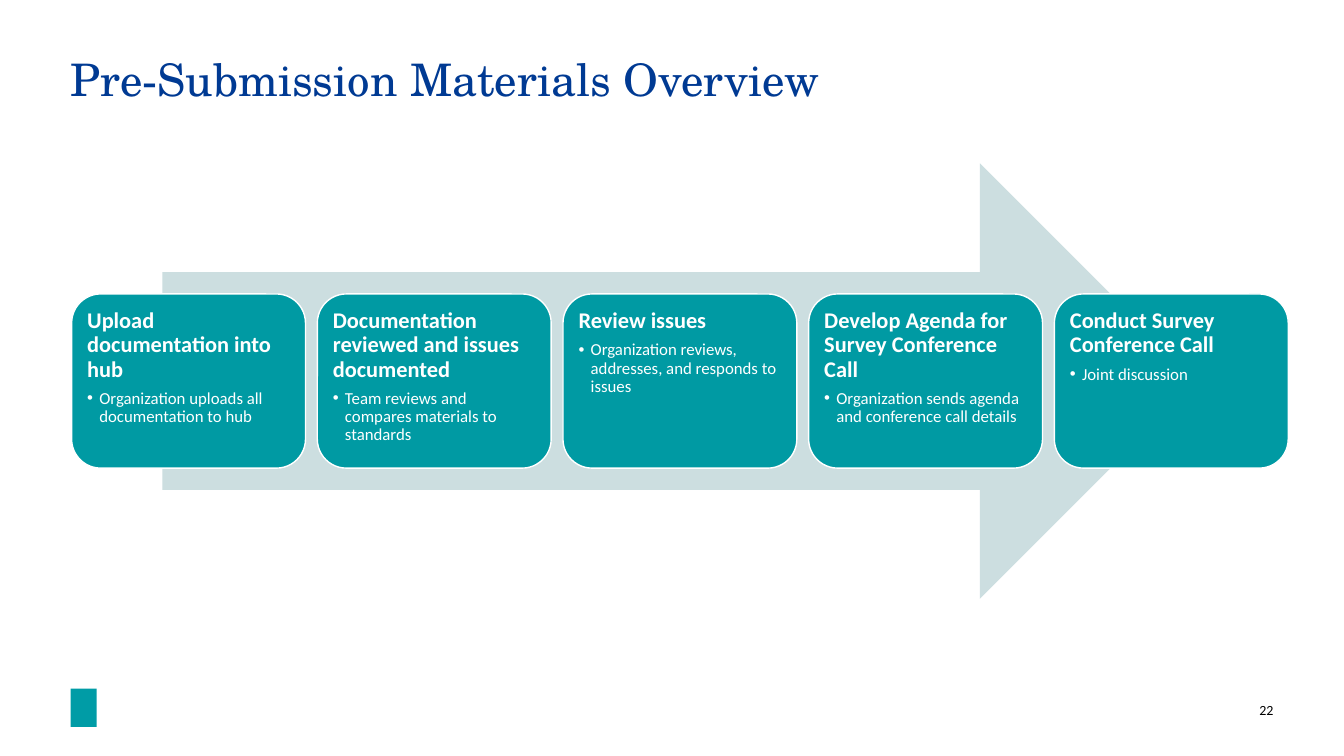
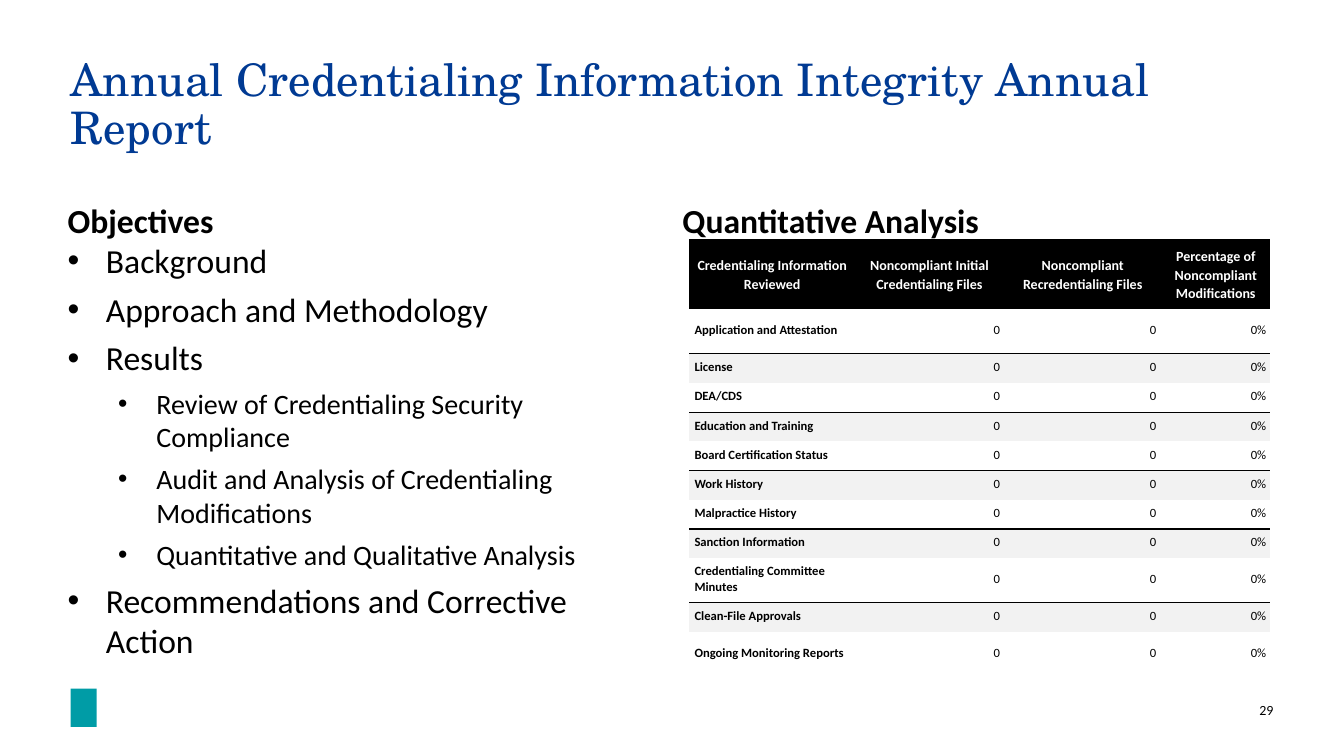
from lxml.etree import SubElement
from pptx import Presentation
from pptx.dml.color import RGBColor
from pptx.enum.shapes import MSO_SHAPE as Preset
from pptx.enum.text import MSO_ANCHOR as Anchor, PP_ALIGN as Align
from pptx.oxml import parse_xml
from pptx.oxml.ns import nsdecls, qn
from pptx.util import Inches, Pt

SLIDE_WIDTH, SLIDE_HEIGHT = Inches(13.33), Inches(7.5)
BODY_FONT, TITLE_FONT = "Calibri", "TeX Gyre Schola"
BLACK, WHITE, NAVY, TEAL = "000000", "FFFFFF", "003A93", "009AA3"
EMBLEM_TEAL, PALE_TEAL, BAND_GREY = "009CA6", "CCDEE0", "F2F2F2"
PLAIN_TABLE_STYLE = "{2D5ABB26-0587-4C30-8999-92F81FD0307C}"

ARROW = (12.08, 21.6, 77.04, 57.6)
CARD_LEFT, CARD_WIDTH, CARD_GAP = 5.33, 17.4, 0.88
COLUMN_LEFTS, COLUMN_WIDTH = (5.03, 50.78), 44.18
HEADING_TOP, HEADING_HEIGHT, CONTENT_HEIGHT = 22.4, 9.33, 57.6
CONTENT_TOP = HEADING_TOP + HEADING_HEIGHT

STEPS = [
    ("Upload documentation into hub", "Organization uploads all documentation to hub"),
    ("Documentation reviewed and issues documented", "Team reviews and compares materials to standards"),
    ("Review issues", "Organization reviews, addresses, and responds to issues"),
    ("Develop Agenda for Survey Conference Call", "Organization sends agenda and conference call details"),
    ("Conduct Survey Conference Call", "Joint discussion"),
]
OBJECTIVES = [
    (0, "Background"),
    (0, "Approach and Methodology"),
    (0, "Results"),
    (1, "Review of Credentialing Security Compliance"),
    (1, "Audit and Analysis of Credentialing Modifications"),
    (1, "Quantitative and Qualitative Analysis"),
    (0, "Recommendations and Corrective Action"),
]
TABLE_HEADER = [
    "Credentialing Information Reviewed", "Noncompliant Initial Credentialing Files",
    "Noncompliant Recredentialing Files", "Percentage of Noncompliant Modifications",
]
REVIEWED_ITEMS = [
    "Application and Attestation", "License", "DEA/CDS", "Education and Training",
    "Board Certification Status", "Work History", "Malpractice History",
    "Sanction Information", "Credentialing Committee Minutes",
    "Clean-File Approvals", "Ongoing Monitoring Reports",
]
COLUMN_INCHES = [1.63, 1.49, 1.55, 1.09]
HEADER_ROW, LINE_ROW, TALL_ROW = 0.69, 0.29, 0.44
TALL_ITEMS = {"Application and Attestation", "Credentialing Committee Minutes", "Ongoing Monitoring Reports"}


def color(hex_string):
    return RGBColor.from_string(hex_string)


def percent_box(left, top, width, height):
    return (int(SLIDE_WIDTH * left / 100), int(SLIDE_HEIGHT * top / 100),
            int(SLIDE_WIDTH * width / 100), int(SLIDE_HEIGHT * height / 100))


def set_bullet(paragraph, indent, hanging, bullet_size):
    properties = paragraph._p.get_or_add_pPr()
    properties.set("marL", str(Inches(indent)))
    properties.set("indent", str(-Inches(hanging)))
    SubElement(properties, qn("a:buSzPct")).set("val", str(bullet_size * 1000))
    SubElement(properties, qn("a:buFont")).set("typeface", "Arial")
    SubElement(properties, qn("a:buChar")).set("char", "•")


def write(frame, text, size=24, font=BODY_FONT, ink=BLACK, bold=False, align=Align.LEFT,
          spacing=1.0, after=0, indent=0, hanging=0, bullet_size=100):
    paragraph = frame.paragraphs[0]
    if paragraph.runs:
        paragraph = frame.add_paragraph()
    if hanging:
        set_bullet(paragraph, indent, hanging, bullet_size)
    paragraph.alignment = align
    paragraph.line_spacing = spacing
    paragraph.space_after = Pt(after)
    run = paragraph.add_run()
    run.text = text
    run.font.name = font
    run.font.size = Pt(size)
    run.font.bold = bold
    run.font.color.rgb = color(ink)


def set_frame(frame, inset=0, anchor=Anchor.TOP):
    frame.word_wrap = True
    frame.vertical_anchor = anchor
    frame.margin_left = frame.margin_right = Inches(inset)
    frame.margin_top = frame.margin_bottom = Inches(inset)
    return frame


def add_text_frame(slide, box, anchor=Anchor.TOP):
    return set_frame(slide.shapes.add_textbox(*percent_box(*box)).text_frame, anchor=anchor)


def add_filled_shape(slide, preset, box, fill, outline=None):
    shape = slide.shapes.add_shape(preset, *percent_box(*box))
    shape.shadow.inherit = False
    shape.fill.solid()
    shape.fill.fore_color.rgb = color(fill)
    if outline:
        shape.line.color.rgb = color(outline)
        shape.line.width = Pt(1)
    else:
        shape.line.fill.background()
    return shape


def add_base_slide(presentation, title, number):
    slide = presentation.slides.add_slide(presentation.slide_layouts[6])
    add_filled_shape(slide, Preset.RECTANGLE, (5.25, 91.1, 1.95, 5.05), EMBLEM_TEAL)
    write(add_text_frame(slide, (91.9, 92.8, 2.85, 2.27)), number, size=10, align=Align.RIGHT)
    write(add_text_frame(slide, (5.25, 7.6, 89.42, 14)), title,
          size=32, font=TITLE_FONT, ink=NAVY, spacing=0.9)
    return slide


def add_step_card(slide, index, heading, detail):
    arrow_top, arrow_height = ARROW[1], ARROW[3]
    left = CARD_LEFT + index * (CARD_WIDTH + CARD_GAP)
    box = (left, arrow_top + 0.3 * arrow_height, CARD_WIDTH, 0.4 * arrow_height)
    card = add_filled_shape(slide, Preset.ROUNDED_RECTANGLE, box, TEAL, outline=WHITE)
    frame = set_frame(card.text_frame, inset=0.07)
    write(frame, heading, size=16, ink=WHITE, bold=True, spacing=0.9, after=5.5)
    write(frame, detail, size=12, ink=WHITE, spacing=0.9, indent=0.12, hanging=0.12)


def add_heading(slide, left, text):
    frame = add_text_frame(slide, (left, HEADING_TOP, COLUMN_WIDTH, HEADING_HEIGHT), Anchor.BOTTOM)
    write(frame, text, bold=True)


def add_objectives(slide, left):
    frame = add_text_frame(slide, (left, CONTENT_TOP, COLUMN_WIDTH, CONTENT_HEIGHT))
    for level, text in OBJECTIVES:
        write(frame, text, size=24 - 4 * level, after=6, indent=0.38 + 0.5 * level,
              hanging=0.38, bullet_size=100 - 5 * level)


def set_border(cell, side):
    line = parse_xml(
        f'<a:{side} {nsdecls("a")} w="12700"><a:solidFill><a:srgbClr val="{BLACK}"/>'
        f'</a:solidFill></a:{side}>')
    cell._tc.get_or_add_tcPr().insert(0, line)


def format_cell(cell, text, row, column):
    header = row == 0
    cell.vertical_anchor = Anchor.MIDDLE
    cell.margin_left, cell.margin_right = Inches(0.05), Inches(0.04)
    cell.margin_top, cell.margin_bottom = Inches(0.07 if header else 0.04), Inches(0.07)
    if row % 2 == 0:
        cell.fill.solid()
        cell.fill.fore_color.rgb = color(BLACK if header else BAND_GREY)
    else:
        cell.fill.background()
    if header:
        set_border(cell, "lnT")
    elif row % 2 and row < len(REVIEWED_ITEMS):
        set_border(cell, "lnB")
    body_align = Align.RIGHT if column else Align.LEFT
    write(cell.text_frame, text, size=10 if header else 9, ink=WHITE if header else BLACK,
          bold=header or column == 0, align=Align.CENTER if header else body_align, spacing=1.07)


def add_analysis_table(slide):
    rows = [TABLE_HEADER] + [[item, "0", "0", "0%"] for item in REVIEWED_ITEMS]
    heights = [HEADER_ROW] + [TALL_ROW if item in TALL_ITEMS else LINE_ROW for item in REVIEWED_ITEMS]
    box = percent_box(51.3, CONTENT_TOP, 43.2, CONTENT_HEIGHT)
    table = slide.shapes.add_table(len(rows), len(COLUMN_INCHES), *box).table
    table.first_row = table.horz_banding = False
    table._tbl.tblPr.find(qn("a:tableStyleId")).text = PLAIN_TABLE_STYLE
    for column, width in zip(table.columns, COLUMN_INCHES):
        column.width = Inches(width)
    for row, height in zip(table.rows, heights):
        row.height = Inches(height)
    for row_index, values in enumerate(rows):
        for column_index, text in enumerate(values):
            format_cell(table.cell(row_index, column_index), text, row_index, column_index)


def build_overview(presentation):
    slide = add_base_slide(presentation, "Pre-Submission Materials Overview", "22")
    add_filled_shape(slide, Preset.RIGHT_ARROW, ARROW, PALE_TEAL)
    for index, (heading, detail) in enumerate(STEPS):
        add_step_card(slide, index, heading, detail)


def build_report(presentation):
    slide = add_base_slide(presentation, "Annual Credentialing Information Integrity Annual Report", "29")
    for left, heading in zip(COLUMN_LEFTS, ("Objectives", "Quantitative Analysis")):
        add_heading(slide, left, heading)
    add_objectives(slide, COLUMN_LEFTS[0])
    add_analysis_table(slide)


def main():
    presentation = Presentation()
    presentation.slide_width, presentation.slide_height = SLIDE_WIDTH, SLIDE_HEIGHT
    build_overview(presentation)
    build_report(presentation)
    presentation.save("out.pptx")


if __name__ == "__main__":
    main()
